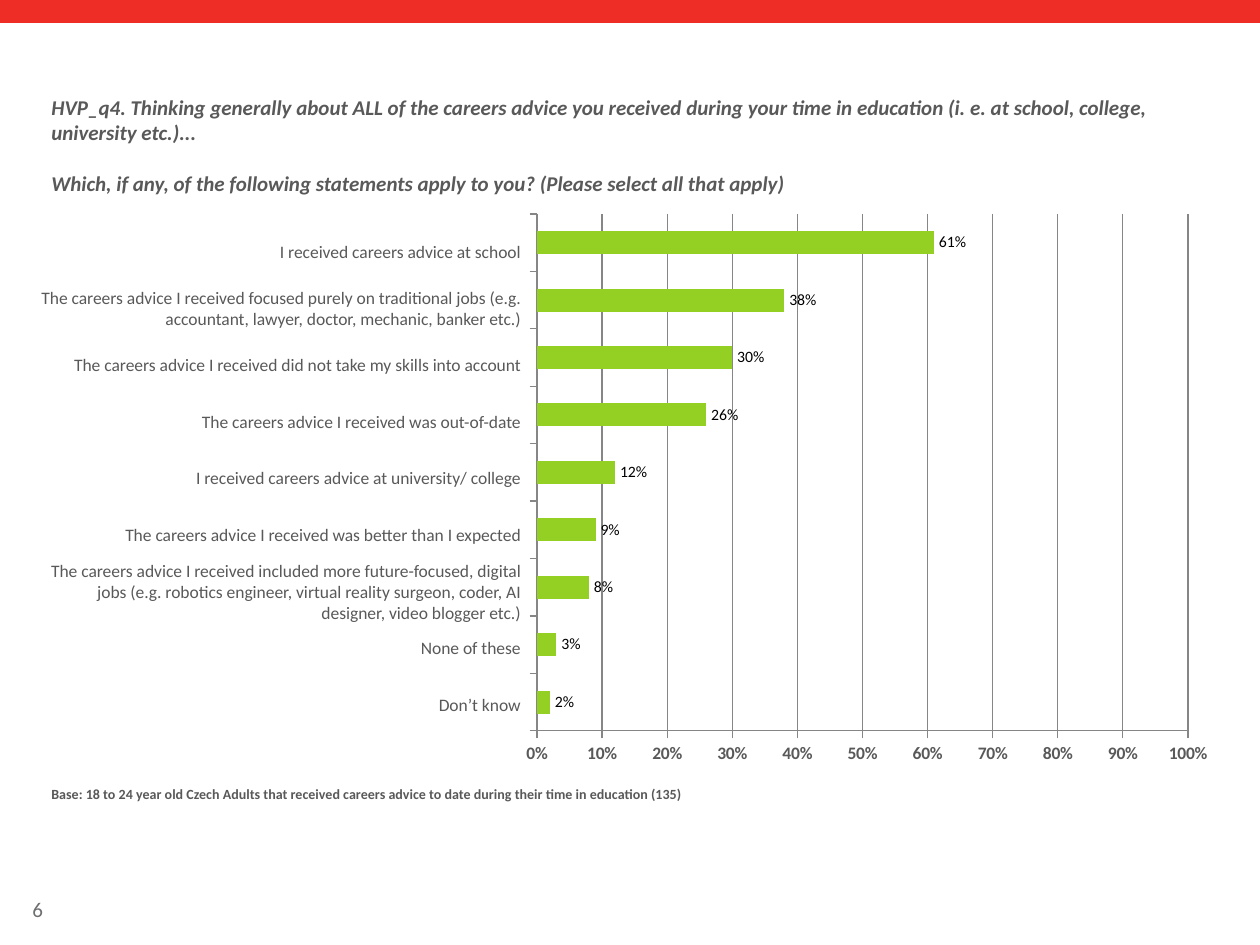
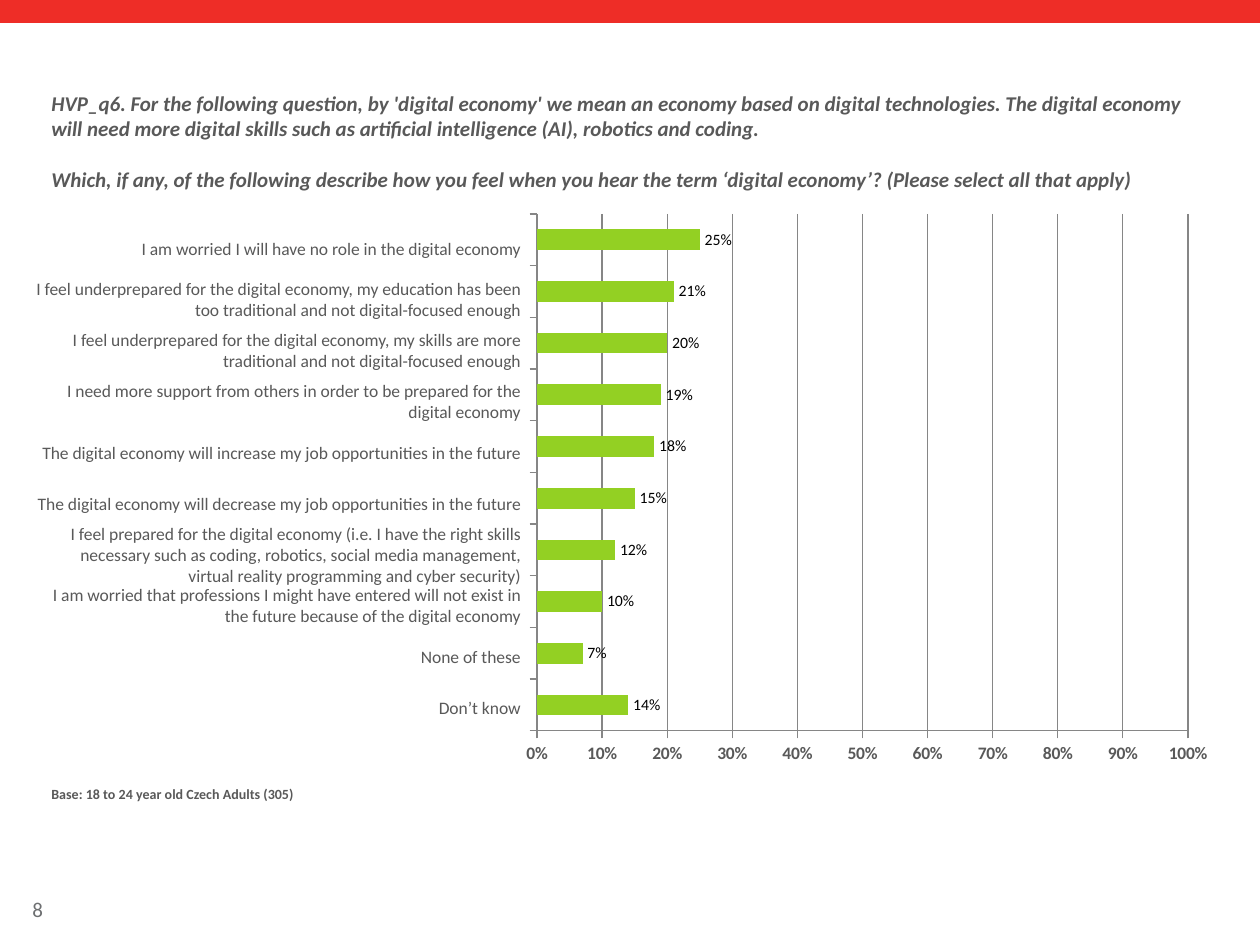
"""Build two survey slides that pair right-aligned answers with a bar chart."""
from dataclasses import dataclass

from lxml import etree
from pptx import Presentation
from pptx import util as u
from pptx.chart.data import CategoryChartData
from pptx.dml.color import RGBColor
from pptx.enum import chart as charts, shapes, text

SURVEY = [
    {
        "page": "6",
        "question_box": (39, 88, 1183, 116),
        "question": [
            "HVP_q4. Thinking generally about ALL of the careers advice you received during your time in "
            "education (i. e. at school, college, university etc.)...",
            "Which, if any, of the following statements apply to you? (Please select all that apply)",
        ],
        "answers": [
            ("I received careers advice at school", 0.61),
            ("The careers advice I received focused purely on traditional jobs (e.g. accountant, lawyer, "
             "doctor, mechanic, banker etc.)", 0.38),
            ("The careers advice I received did not take my skills into account", 0.30),
            ("The careers advice I received was out-of-date", 0.26),
            ("I received careers advice at university/ college", 0.12),
            ("The careers advice I received was better than I expected", 0.09),
            ("The careers advice I received included more future-focused, digital jobs (e.g. robotics "
             "engineer, virtual reality surgeon, coder, AI designer, video blogger etc.)", 0.08),
            ("None of these", 0.03),
            ("Don’t know", 0.02),
        ],
        "base": "Base: 18 to 24 year old Czech Adults that received careers advice to date during their "
                "time in education (135)",
    },
    {
        "page": "8",
        "question_box": (39, 84, 1183, 118),
        "question": [
            "HVP_q6. For the following question, by 'digital economy' we mean an economy based on digital "
            "technologies. The digital economy will need more digital skills such as artificial "
            "intelligence (AI), robotics and coding.",
            "Which, if any, of the following describe how you feel when you hear the term ‘digital "
            "economy’? (Please select all that apply)",
        ],
        "answers": [
            ("I am worried I will have no role in the digital economy", 0.25),
            ("I feel underprepared for the digital economy, my education has been too traditional and not "
             "digital-focused enough", 0.21),
            ("I feel underprepared for the digital economy, my skills are more traditional and not "
             "digital-focused enough", 0.20),
            ("I need more support from others in order to be prepared for the digital economy", 0.19),
            ("The digital economy will increase my job opportunities in the future", 0.18),
            ("The digital economy will decrease my job opportunities in the future", 0.15),
            ("I feel prepared for the digital economy (i.e. I have the right skills necessary such as "
             "coding, robotics, social media management, virtual reality programming and cyber "
             "security)", 0.12),
            ("I am worried that professions I might have entered will not exist in the future because of "
             "the digital economy", 0.10),
            ("None of these", 0.07),
            ("Don’t know", 0.14),
        ],
        "base": "Base: 18 to 24 year old Czech Adults (305)",
    },
]

SLIDE = (1260, 945)
BAND = (0, 0, 1260, 23)
PAGE_NUMBER = (20, 890, 97, 38)
ANSWERS = (20, 223, 513, 510)
CHART = (513, 203, 709, 571)
PLOT = (537, 214, 651, 517)
BASE = (39, 779, 1183, 54)


@dataclass(frozen=True)
class Theme:
    """Colours, fonts and type sizes shared by the slides."""
    font: str = "Calibri"
    chart_font: str = "Manrope"
    band: str = "EE2D27"
    bar: str = "93D023"
    ink: str = "595959"
    muted: str = "6D6F71"
    value: str = "000000"
    rule: str = "868686"
    question_size: float = 12
    page_size: float = 12
    answer_size: float = 10
    axis_size: float = 10
    value_size: float = 9
    base_size: float = 8
    chart_size: float = 18
    question_gap: float = 14.6


THEME = Theme()


def px(length):
    """Turn px into EMU."""
    return u.Emu(round(length * 914400 / 126))


def place(box):
    """Turn a px box into EMU."""
    return [px(length) for length in box]


def style(font, size, colour, bold=False, italic=False, name=THEME.font):
    """Set a font's face, size, colour and weight."""
    font.name, font.size, font.bold, font.italic = name, u.Pt(size), bold, italic
    font.color.rgb = RGBColor.from_string(colour)


def write(slide, box, paragraphs, size, colour=THEME.ink, bold=False, italic=False,
          align=text.PP_ALIGN.LEFT, anchor=text.MSO_ANCHOR.TOP):
    """Add a wrapped text box with one run in each paragraph."""
    frame = slide.shapes.add_textbox(*place(box)).text_frame
    frame.word_wrap = True
    frame.vertical_anchor = anchor
    for index, wording in enumerate(paragraphs):
        paragraph = frame.add_paragraph() if index else frame.paragraphs[0]
        paragraph.alignment = align
        if index:
            paragraph.space_before = u.Pt(THEME.question_gap)
        run = paragraph.add_run()
        run.text = wording
        style(run.font, size, colour, bold, italic)


def draw_rule(line):
    """Give an axis or grid line its colour and width."""
    line.color.rgb = RGBColor.from_string(THEME.rule)
    line.width = u.Pt(0.75)


def fix_plot(chart):
    """Pin the inner plot area to its place within the chart."""
    plot_area = chart.plots[0]._element.getparent()
    space = etree.QName(plot_area).namespace
    for layout in plot_area.findall(f"{{{space}}}layout"):
        plot_area.remove(layout)
    layout = etree.Element(f"{{{space}}}layout")
    manual = etree.SubElement(layout, f"{{{space}}}manualLayout")
    left, top, width, height = CHART
    settings = {
        "layoutTarget": "inner", "xMode": "edge", "yMode": "edge",
        "x": (PLOT[0] - left) / width, "y": (PLOT[1] - top) / height,
        "w": PLOT[2] / width, "h": PLOT[3] / height,
    }
    for tag, setting in settings.items():
        etree.SubElement(manual, f"{{{space}}}{tag}").set("val", str(setting))
    plot_area.insert(0, layout)


def add_bars(slide, shares):
    """Draw the shares as horizontal bars, first answer on top."""
    figures = CategoryChartData(number_format="0%")
    figures.categories = [str(number + 1) for number in range(len(shares))]
    figures.add_series("Series 1", shares[::-1])
    chart = slide.shapes.add_chart(charts.XL_CHART_TYPE.BAR_CLUSTERED, *place(CHART), figures).chart
    chart.has_legend = chart.has_title = False
    style(chart.font, THEME.chart_size, THEME.muted, name=THEME.chart_font)

    answers, percent = chart.category_axis, chart.value_axis
    answers.tick_label_position = charts.XL_TICK_LABEL_POSITION.NONE
    answers.has_major_gridlines = False
    percent.tick_label_position = charts.XL_TICK_LABEL_POSITION.LOW
    percent.minimum_scale, percent.maximum_scale, percent.major_unit = 0, 1, 0.1
    percent.has_major_gridlines = True
    percent.tick_labels.number_format = "0%"
    percent.tick_labels.number_format_is_linked = False
    for axis in (answers, percent):
        axis.major_tick_mark = charts.XL_TICK_MARK.OUTSIDE
        axis.minor_tick_mark = charts.XL_TICK_MARK.NONE
        style(axis.tick_labels.font, THEME.axis_size, THEME.ink, bold=axis is percent)
        draw_rule(axis.format.line)
    draw_rule(percent.major_gridlines.format.line)

    bars = chart.plots[0]
    bars.gap_width, bars.overlap, bars.vary_by_categories = 150, -10, False
    fill = bars.series[0].format.fill
    fill.solid()
    fill.fore_color.rgb = RGBColor.from_string(THEME.bar)
    bars.has_data_labels = True
    labels = bars.data_labels
    labels.show_value = True
    labels.position = charts.XL_LABEL_POSITION.OUTSIDE_END
    labels.number_format, labels.number_format_is_linked = "0%", False
    style(labels.font, THEME.value_size, THEME.value)
    fix_plot(chart)


def add_frame(slide, page):
    """Draw the top band and the page number."""
    band = slide.shapes.add_shape(shapes.MSO_SHAPE.RECTANGLE, *place(BAND))
    band.shadow.inherit = False
    band.fill.solid()
    band.fill.fore_color.rgb = RGBColor.from_string(THEME.band)
    band.line.fill.background()
    write(slide, PAGE_NUMBER, [page], THEME.page_size, THEME.muted, anchor=text.MSO_ANCHOR.MIDDLE)


def add_survey(slide, survey):
    """Lay out one survey question with its answers and base."""
    add_frame(slide, survey["page"])
    write(slide, survey["question_box"], survey["question"], THEME.question_size, bold=True, italic=True)
    add_bars(slide, [share for _, share in survey["answers"]])
    left, top, width, height = ANSWERS
    row = height / len(survey["answers"])
    for index, (answer, _) in enumerate(survey["answers"]):
        write(slide, (left, top + index * row, width, row), [answer], THEME.answer_size,
              align=text.PP_ALIGN.RIGHT, anchor=text.MSO_ANCHOR.MIDDLE)
    write(slide, BASE, [survey["base"]], THEME.base_size, bold=True)


def main():
    """Build and save the deck."""
    deck = Presentation()
    deck.slide_width, deck.slide_height = place(SLIDE)
    for survey in SURVEY:
        add_survey(deck.slides.add_slide(deck.slide_layouts[6]), survey)
    deck.save("out.pptx")


if __name__ == "__main__":
    main()
